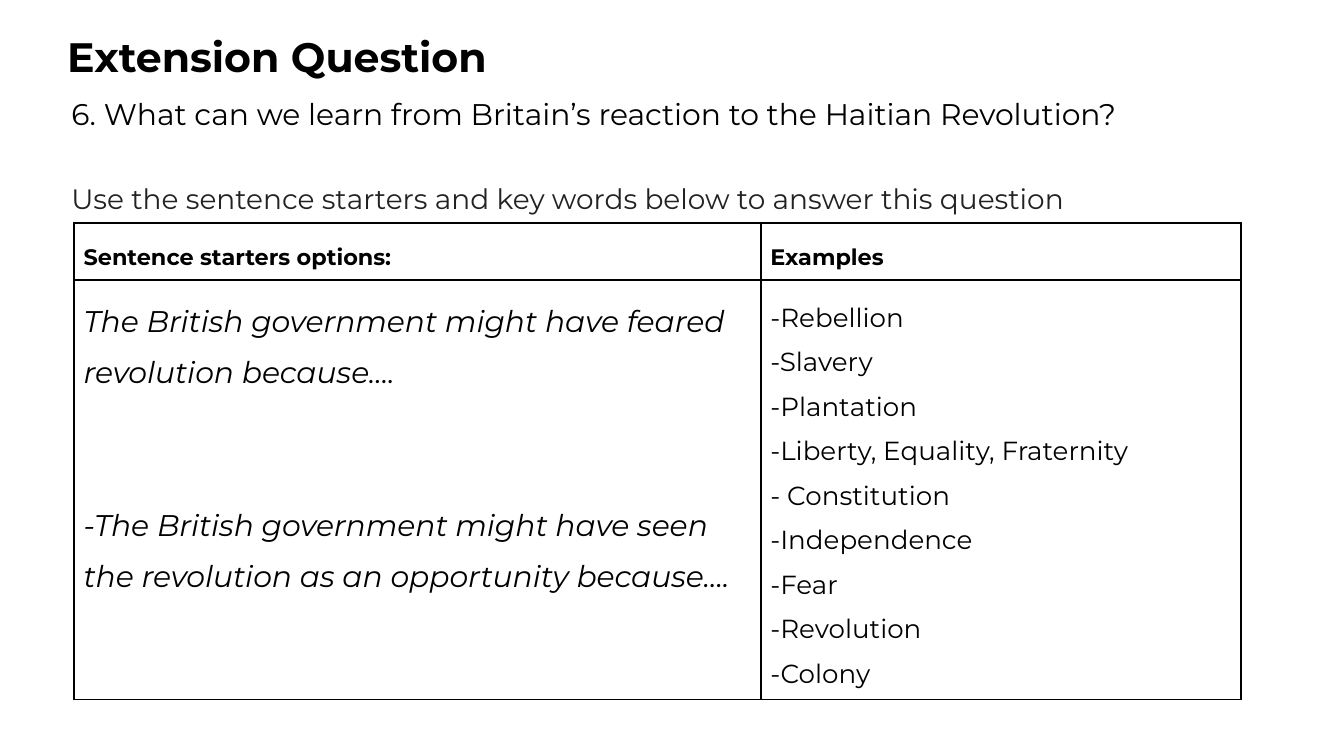
from lxml.etree import SubElement
from pptx import Presentation
from pptx.dml.color import RGBColor as RGB
from pptx.enum.text import MSO_ANCHOR as Anchor, MSO_AUTO_SIZE as AutoSize, PP_ALIGN as Align
from pptx.oxml import parse_xml
from pptx.oxml.ns import nsdecls, qn
from pptx.util import Pt

COLORS = {"black": "000000", "grey": "222222", "white": "FFFFFF"}
FONT = "Montserrat"
LINE = 1.22

TITLE = "Extension Question"
QUESTION = "6. What can we learn from Britain’s reaction to the Haitian Revolution?"
INSTRUCTION = "Use the sentence starters and key words below to answer this question"
HEADERS = ["Sentence starters options:", "Examples"]
STARTERS = [
    "The British government might have feared revolution because….",
    "-The British government might have seen the revolution as an opportunity because….",
]
EXAMPLES = [
    "-Rebellion", "-Slavery", "-Plantation", "-Liberty, Equality, Fraternity",
    "- Constitution", "-Independence", "-Fear", "-Revolution", "-Colony",
]

TITLE_FMT = {"size": Pt(22), "bold": True}
HEADER_FMT = {"size": Pt(12), "bold": True}
STARTER_FMT = {"size": Pt(16), "bold": False, "italic": True}
EXAMPLE_FMT = {"size": Pt(14), "bold": False}

TITLE_BOX = (36, 13, 648, 64)
PROMPT_BOX = (31, 44, 648, 70)
TABLE_POS = (39.8, 119.6)
COLS = (367.9, 257)
ROWS = (30.4, 224.6)


def write(tf, texts, fmt, spacing=1.4, gap=0, color="black"):
    """Fill a text frame with formatted paragraphs separated by a gap."""
    for i, text in enumerate(texts):
        p = tf.paragraphs[0] if i == 0 else tf.add_paragraph()
        layout = {"alignment": Align.LEFT, "line_spacing": spacing,
                  "space_before": Pt(gap if i else 0), "space_after": Pt(0)}
        for name, value in layout.items():
            setattr(p, name, value)
        r = p.add_run()
        r.text = text
        for name, value in {"name": FONT, **fmt}.items():
            setattr(r.font, name, value)
        r.font.color.rgb = RGB.from_string(COLORS[color])


def place(s, box, inset):
    """Position a placeholder and return its plain, top-anchored frame."""
    for name, value in zip(("left", "top", "width", "height"), box):
        setattr(s, name, Pt(value))
    tf = s.text_frame
    frame = {"word_wrap": True, "auto_size": AutoSize.NONE, "vertical_anchor": Anchor.TOP}
    frame.update({f"margin_{side}": Pt(inset) for side in ("left", "right", "top", "bottom")})
    for name, value in frame.items():
        setattr(tf, name, value)
    return tf


def add_borders(cell):
    """Draw a one-point black line on each side of a cell."""
    tc_pr = cell._tc.get_or_add_tcPr()
    for i, side in enumerate("LRTB"):
        tc_pr.insert(i, parse_xml(
            f'<a:ln{side} {nsdecls("a")} w="{Pt(1)}"><a:solidFill>'
            f'<a:srgbClr val="{COLORS["black"]}"/></a:solidFill></a:ln{side}>'))


def add_grid(slide):
    """Add the table of sentence starters and examples."""
    s = slide.shapes.add_table(2, 2, *map(Pt, TABLE_POS), Pt(sum(COLS)), Pt(sum(ROWS)))
    table = s.table
    table.first_row = table.horz_banding = False
    for col, width in zip(table.columns, COLS):
        col.width = Pt(width)
    for row, height in zip(table.rows, ROWS):
        row.height = Pt(height)
    blank_lines = 2 * 16 * LINE * 1.4
    contents = [
        [([h], HEADER_FMT, 0) for h in HEADERS],
        [(STARTERS, STARTER_FMT, blank_lines), (EXAMPLES, EXAMPLE_FMT, 0)],
    ]
    for y, row in enumerate(contents):
        for x, (texts, fmt, gap) in enumerate(row):
            cell = table.cell(y, x)
            for side in ("left", "right", "top", "bottom"):
                setattr(cell, f"margin_{side}", Pt(5))
            if y == 0:
                cell.fill.solid()
                cell.fill.fore_color.rgb = RGB.from_string(COLORS["white"])
            else:
                cell.fill.background()
            add_borders(cell)
            write(cell.text_frame, texts, fmt, gap=gap)


def main():
    """Build and save the slide."""
    prs = Presentation()
    prs.slide_width, prs.slide_height = Pt(720), Pt(405)
    slide = prs.slides.add_slide(prs.slide_layouts[1])
    write(place(slide.shapes.title, TITLE_BOX, 0), [TITLE], TITLE_FMT, spacing=1.15)

    tf = place(slide.placeholders[1], PROMPT_BOX, 7.2)
    write(tf, [QUESTION, INSTRUCTION], {"size": Pt(16)}, spacing=1.0, gap=16 * LINE)
    for p in tf.paragraphs:
        p_pr = p._p.get_or_add_pPr()
        p_pr.set("marL", "0")
        p_pr.set("indent", "0")
        SubElement(p_pr, qn("a:buNone"))
    p = tf.paragraphs[1]
    p.line_spacing = 1.4
    p.runs[0].font.size = Pt(15)
    p.runs[0].font.color.rgb = RGB.from_string(COLORS["grey"])

    add_grid(slide)
    prs.save("out.pptx")


if __name__ == "__main__":
    main()
